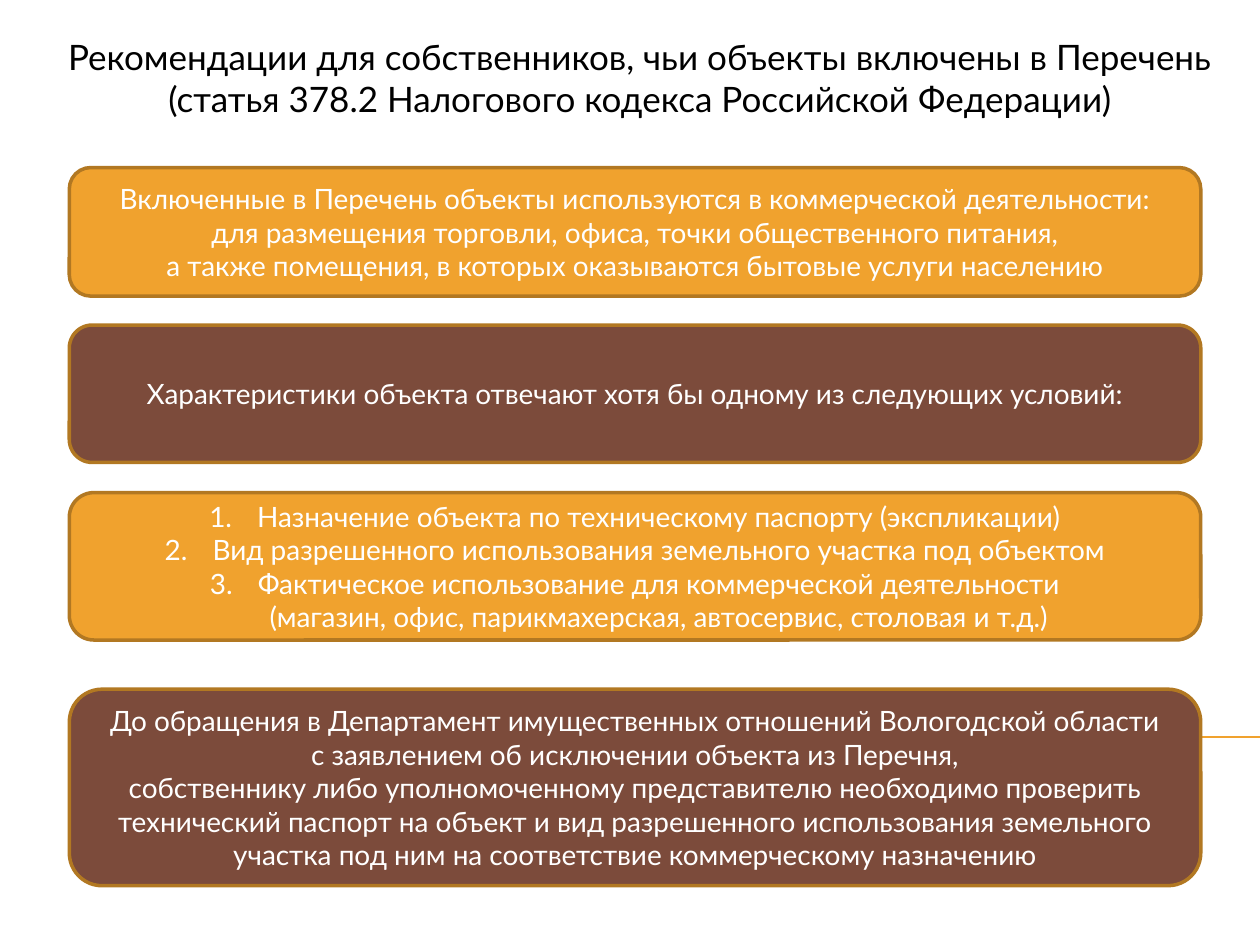
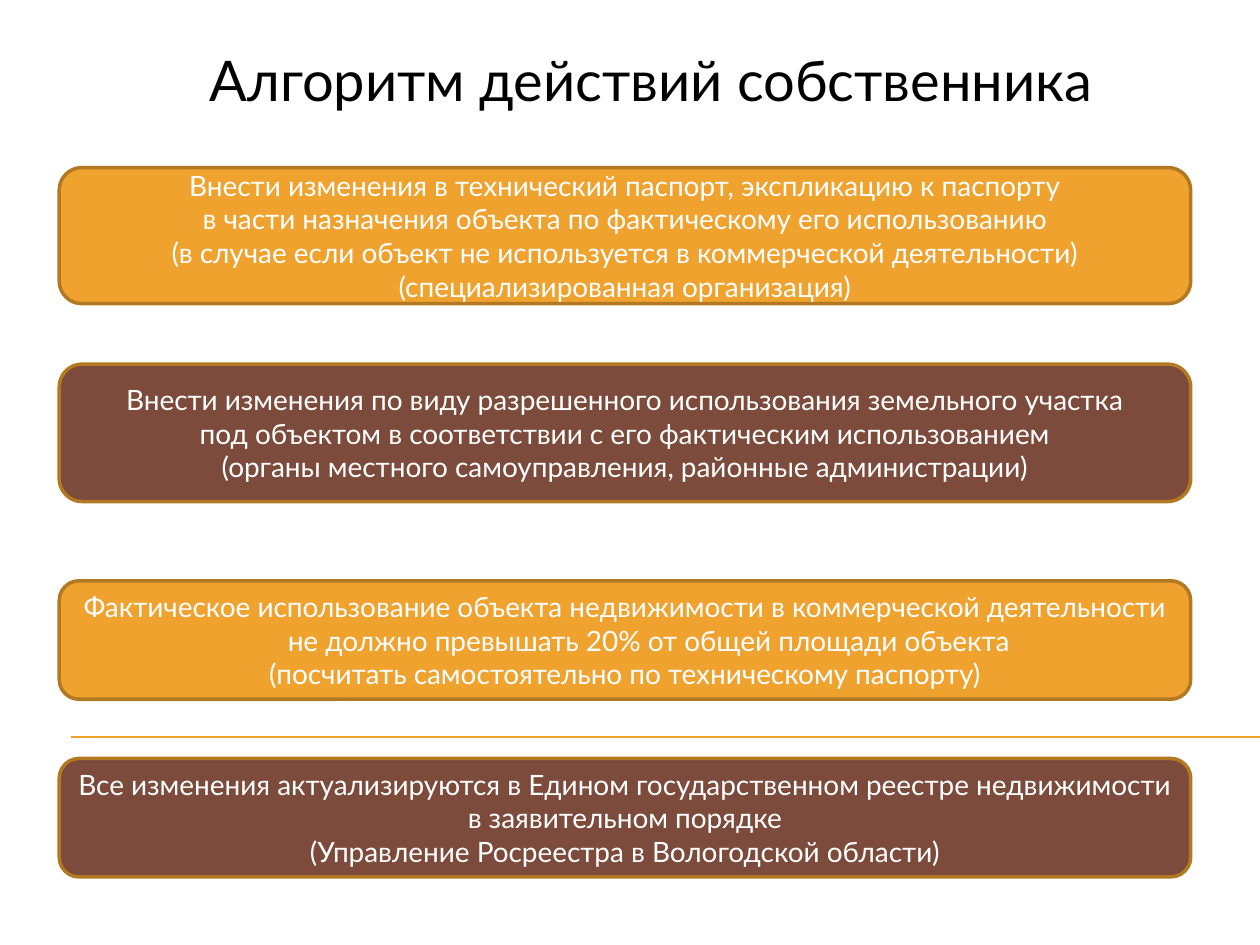
from dataclasses import dataclass
from itertools import cycle

from lxml.etree import SubElement
from pptx import Presentation
from pptx.dml.color import RGBColor
from pptx.enum.shapes import MSO_CONNECTOR, MSO_SHAPE
from pptx.enum.text import MSO_ANCHOR, MSO_AUTO_SIZE, PP_ALIGN
from pptx.oxml.ns import qn
from pptx.util import Inches, Pt


@dataclass(frozen=True)
class Theme:
    font: str = "Lato"
    amber: RGBColor = RGBColor(0xF0, 0xA2, 0x2E)
    brown: RGBColor = RGBColor(0x7C, 0x4B, 0x3B)
    border: RGBColor = RGBColor(0xB2, 0x78, 0x22)
    title_color: RGBColor = RGBColor(0, 0, 0)
    band_color: RGBColor = RGBColor(0xFF, 0xFF, 0xFF)
    band_size: int = 16
    border_width: int = 2
    rule_width: float = 0.75


@dataclass(frozen=True)
class Band:
    """A rounded block of text; top and height are in grid rows."""
    top: float
    height: float
    lines: tuple
    layout: tuple = ("plain",) * 4


THEME = Theme()
# Left margin and first-line indent of each kind of line, in inches
INDENTS = {"numbered": (0.38, -0.38), "hanging": (0.38, -0.38), "inset": (0.38, 0)}

SLIDES = [
    {
        "title": ("Рекомендации для собственников, чьи объекты включены в Перечень",
                  "(статья 378.2 Налогового кодекса Российской Федерации)"),
        "title_box": (3.9, 2.3, 93.8, 7.7),
        "title_size": 20,
        "title_align": PP_ALIGN.CENTER,
        "band_left": 5.5,
        "bands": [
            Band(13.3, 10.2, (
                "Включенные в Перечень объекты используются в коммерческой деятельности:",
                "для размещения торговли, офиса, точки общественного питания,",
                "а также помещения, в которых оказываются бытовые услуги населению")),
            Band(25.8, 10.9, (
                "Характеристики объекта отвечают хотя бы одному из следующих условий:",)),
            Band(39.1, 11.7, (
                "Назначение объекта по техническому паспорту (экспликации)",
                "Вид разрешенного использования земельного участка под объектом",
                "Фактическое использование для коммерческой деятельности",
                "(магазин, офис, парикмахерская, автосервис, столовая и т.д.)"),
                ("numbered", "numbered", "numbered", "inset")),
            Band(54.7, 15.6, (
                "До обращения в Департамент имущественных отношений Вологодской области",
                "с заявлением об исключении объекта из Перечня,",
                "собственнику либо уполномоченному представителю необходимо проверить "
                "технический паспорт на объект и вид разрешенного использования земельного "
                "участка под ним на соответствие коммерческому назначению")),
        ],
    },
    {
        "title": ("Алгоритм действий собственника",),
        "title_box": (15.6, 3.1, 73.2, 6.4),
        "title_size": 32,
        "title_align": PP_ALIGN.LEFT,
        "band_left": 4.7,
        "bands": [
            Band(13.3, 10.8, (
                "Внести изменения в технический паспорт, экспликацию к паспорту",
                "в части назначения объекта по фактическому его использованию",
                "(в случае если объект не используется в коммерческой деятельности)",
                "(специализированная организация)")),
            Band(28.9, 10.9, (
                "Внести изменения по виду разрешенного использования земельного участка",
                "под объектом в соответствии с его фактическим использованием",
                "(органы местного самоуправления, районные администрации)")),
            Band(46.1, 9.4, (
                "Фактическое использование объекта недвижимости в коммерческой деятельности "
                "не должно превышать 20% от общей площади объекта",
                "(посчитать самостоятельно по техническому паспорту)"),
                ("hanging", "hanging")),
            Band(60.2, 9.4, (
                "Все изменения актуализируются в Едином государственном реестре недвижимости",
                "в заявительном порядке",
                "(Управление Росреестра в Вологодской области)")),
        ],
    },
]

deck = Presentation()
deck.slide_width, deck.slide_height = Inches(10), Inches(7.5)
COLUMNS, ROWS = 100, 75
BAND_WIDTH = 89.8
RULE_LEFT, RULE_ROW = 5.6, 58.5


def cells(left, top, width, height):
    """Turn grid columns and rows into slide lengths."""
    column, row = deck.slide_width / COLUMNS, deck.slide_height / ROWS
    return [round(n) for n in (left * column, top * row, width * column, height * row)]


def write_lines(frame, lines, layout, size, color, align):
    frame.text = "\n".join(lines)
    for paragraph, kind in zip(frame.paragraphs, layout):
        paragraph.alignment = align
        properties = paragraph._p.get_or_add_pPr()
        if kind in INDENTS:
            margin, indent = INDENTS[kind]
            properties.set("marL", str(Inches(margin)))
            properties.set("indent", str(Inches(indent)))
        if kind == "numbered":
            SubElement(properties, qn("a:buFont"), typeface="+mj-lt")
            SubElement(properties, qn("a:buAutoNum"), type="arabicPeriod")
        paragraph.font.name = THEME.font
        paragraph.font.size = Pt(size)
        paragraph.font.color.rgb = color


for content in SLIDES:
    slide = deck.slides.add_slide(deck.slide_layouts[5])

    left, top, width, _ = cells(RULE_LEFT, RULE_ROW, COLUMNS - RULE_LEFT, 0)
    rule = slide.shapes.add_connector(MSO_CONNECTOR.STRAIGHT, left, top, left + width, top)
    rule.line.color.rgb = THEME.amber
    rule.line.width = Pt(THEME.rule_width)
    SubElement(rule._element.spPr, qn("a:effectLst"))

    title = slide.shapes.title
    title.left, title.top, title.width, title.height = cells(*content["title_box"])
    title.text_frame.word_wrap = False
    title.text_frame.auto_size = MSO_AUTO_SIZE.NONE
    title.text_frame.vertical_anchor = MSO_ANCHOR.TOP
    write_lines(title.text_frame, content["title"], ("plain",) * 2,
                content["title_size"], THEME.title_color, content["title_align"])

    for band, fill in zip(content["bands"], cycle((THEME.amber, THEME.brown))):
        block = slide.shapes.add_shape(
            MSO_SHAPE.ROUNDED_RECTANGLE,
            *cells(content["band_left"], band.top, BAND_WIDTH, band.height))
        block.shadow.inherit = False
        block.fill.solid()
        block.fill.fore_color.rgb = fill
        block.line.color.rgb = THEME.border
        block.line.width = Pt(THEME.border_width)
        block.text_frame.word_wrap = True
        block.text_frame.vertical_anchor = MSO_ANCHOR.MIDDLE
        write_lines(block.text_frame, band.lines, band.layout,
                    THEME.band_size, THEME.band_color, PP_ALIGN.CENTER)

deck.save("out.pptx")
